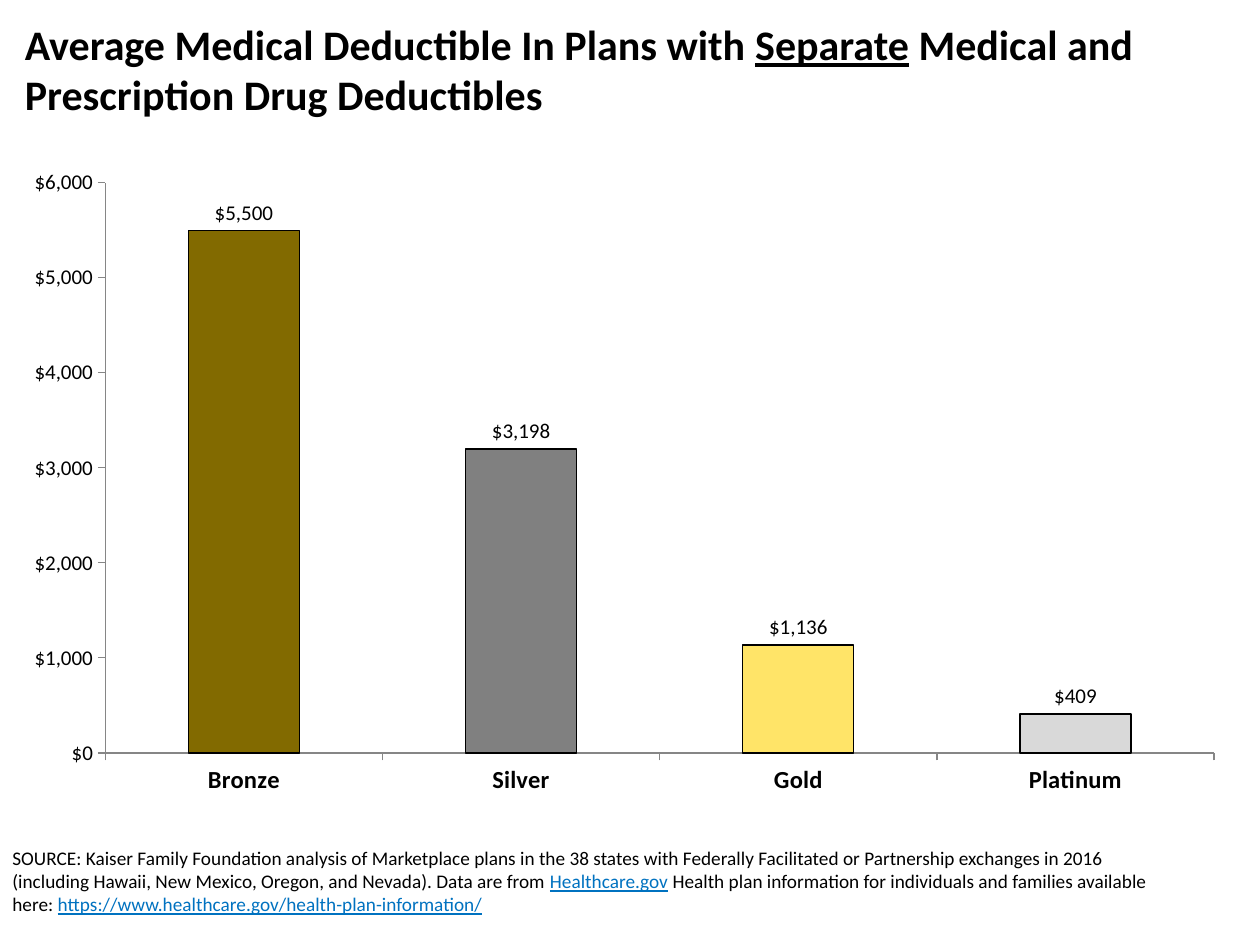
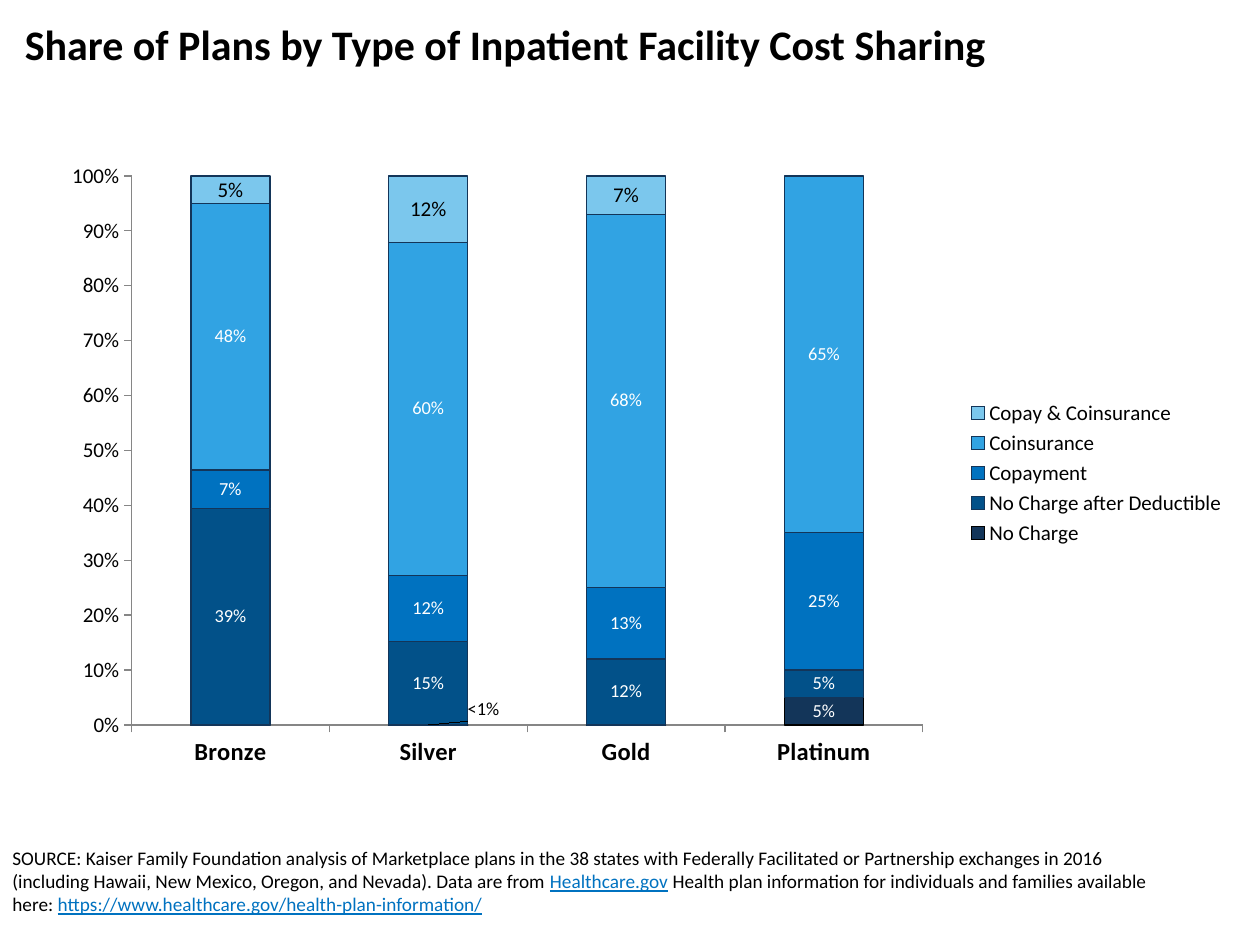
from dataclasses import dataclass

from lxml.etree import SubElement
from pptx import Presentation
from pptx.chart.chart import Chart
from pptx.chart.data import CategoryChartData
from pptx.chart.series import BarSeries
from pptx.dml.color import RGBColor
from pptx.enum.chart import XL_CHART_TYPE as ChartType
from pptx.enum.chart import XL_LABEL_POSITION as LabelPosition
from pptx.enum.chart import XL_LEGEND_POSITION as LegendPosition
from pptx.enum.chart import XL_TICK_MARK as TickMark
from pptx.oxml import parse_xml
from pptx.oxml.ns import nsdecls, qn
from pptx.slide import Slide
from pptx.util import Cm, Pt

FONT = "Calibri"
BLACK = "000000"
WHITE = "FFFFFF"
NAVY = "133559"
LINK_BLUE = "0072C0"
AXIS_GRAY = "868686"
DOLLARS = '"$"#,##0'
PERCENT = "0%"
NONZERO_PERCENT = "0%;;"

METALS = ["Bronze", "Silver", "Gold", "Platinum"]
METAL_COLORS = ["826A00", "808080", "FFE468", "D9D9D9"]


@dataclass
class Run:
    text: str
    color: str = BLACK
    underline: bool = False


@dataclass
class Box:
    """Left, top, width and height in centimetres."""
    left: float
    top: float
    width: float
    height: float

    def lengths(self) -> list[Cm]:
        return [Cm(value) for value in (self.left, self.top, self.width, self.height)]


@dataclass
class Bars:
    name: str
    values: list[float]
    color: str
    line_color: str = NAVY
    label_color: str = WHITE
    label_size: float = 10.5


TITLE_BOX = Box(0.25, 0.25, 24.9, 2.54)
SOURCE_BOX = Box(0, 16.94, 23.5, 2.13)
DEDUCTIBLE_BOX = Box(0.2, 3.17, 24.77, 13.13)
SHARING_BOX = Box(0.2, 2.97, 24.77, 13.13)

SOURCE_RUNS = [
    Run("SOURCE: Kaiser Family Foundation analysis of Marketplace plans in the 38 states with "
        "Federally Facilitated or Partnership exchanges in 2016 (including Hawaii, New Mexico, "
        "Oregon, and Nevada). Data are from "),
    Run("Healthcare.gov", LINK_BLUE, True),
    Run(" Health plan information for individuals and families available here: "),
    Run("https://www.healthcare.gov/health-plan-information/", LINK_BLUE, True),
]

DEDUCTIBLES = Bars("Series 1", [5500, 3198, 1136, 409], NAVY, BLACK, BLACK, 12)

COST_SHARING = [
    Bars("No Charge", [0, 0, 0, 0.05], NAVY, BLACK),
    Bars("No Charge after Deductible", [0.39, 0.15, 0.12, 0.05], "025189"),
    Bars("Copayment", [0.07, 0.12, 0.13, 0.25], LINK_BLUE),
    Bars("Coinsurance", [0.48, 0.6, 0.68, 0.65], "31A3E3"),
    Bars("Copay & Coinsurance", [0.05, 0.12, 0.07, 0], "7BC7ED",
         label_color=BLACK, label_size=12),
]


def rgb(color: str) -> RGBColor:
    return RGBColor.from_string(color)


def set_font(font, size: float, color: str = BLACK, bold: bool = False) -> None:
    font.name = FONT
    font.size = Pt(size)
    font.bold = bold
    font.color.rgb = rgb(color)


def add_text(slide: Slide, box: Box, runs: list[Run], *, size: float, bold: bool = False) -> None:
    frame = slide.shapes.add_textbox(*box.lengths()).text_frame
    frame.word_wrap = True
    paragraph = frame.paragraphs[0]
    for part in runs:
        run = paragraph.add_run()
        run.text = part.text
        set_font(run.font, size, part.color, bold)
        run.font.underline = part.underline


def add_framed_slide(presentation, title: list[Run]) -> Slide:
    """Add a slide with the shared title and source note."""
    slide = presentation.slides.add_slide(presentation.slide_layouts[6])
    add_text(slide, SOURCE_BOX, SOURCE_RUNS, size=11)
    add_text(slide, TITLE_BOX, title, size=24, bold=True)
    return slide


def style_series(series: BarSeries, bars: Bars, label_format: str) -> None:
    series.invert_if_negative = False
    series.format.fill.solid()
    series.format.fill.fore_color.rgb = rgb(bars.color)
    series.format.line.color.rgb = rgb(bars.line_color)
    series.format.line.width = Pt(0.75)
    labels = series.data_labels
    labels.show_value = True
    labels.number_format = label_format
    labels.number_format_is_linked = False
    set_font(labels.font, bars.label_size, bars.label_color)


def add_column_chart(slide: Slide, box: Box, chart_type: ChartType, all_bars: list[Bars], *,
                     axis_format: str, label_format: str, maximum: float, step: float) -> Chart:
    data = CategoryChartData()
    data.categories = METALS
    for bars in all_bars:
        data.add_series(bars.name, bars.values)
    chart = slide.shapes.add_chart(chart_type, *box.lengths(), data).chart
    chart.has_title = False
    chart.has_legend = False
    set_font(chart.font, 12)

    plot = chart.plots[0]
    plot.gap_width = 150
    plot.vary_by_categories = False
    for series, bars in zip(plot.series, all_bars):
        style_series(series, bars, label_format)

    for axis in (chart.category_axis, chart.value_axis):
        axis.has_major_gridlines = False
        axis.major_tick_mark = TickMark.OUTSIDE
        axis.minor_tick_mark = TickMark.NONE
        axis.format.line.color.rgb = rgb(AXIS_GRAY)
        axis.format.line.width = Pt(0.75)
    set_font(chart.category_axis.tick_labels.font, 14, bold=True)
    value_axis = chart.value_axis
    value_axis.minimum_scale = 0
    value_axis.maximum_scale = maximum
    value_axis.major_unit = step
    value_axis.tick_labels.number_format = axis_format
    value_axis.tick_labels.number_format_is_linked = False
    set_font(value_axis.tick_labels.font, 12)
    return chart


def manual_layout(**settings: object):
    layout = parse_xml(f"<c:layout {nsdecls('c')}><c:manualLayout/></c:layout>")
    for name, value in settings.items():
        SubElement(layout[0], qn(f"c:{name}")).set("val", str(value))
    return layout


def place_plot(chart: Chart, left: float, top: float, width: float, height: float) -> None:
    """Fix the inner plot area, in fractions of the chart."""
    plot_area = chart.element.find(f".//{qn('c:plotArea')}")
    for automatic in plot_area.findall(qn("c:layout")):
        plot_area.remove(automatic)
    plot_area.insert(0, manual_layout(layoutTarget="inner", xMode="edge", yMode="edge",
                                      x=left, y=top, w=width, h=height))


def add_side_label(chart: Chart, series: BarSeries, point: int, text: str) -> None:
    """Write a label of its own to the right of a bar too small to hold one."""
    paragraph = series.points[point].data_label.text_frame.paragraphs[0]
    run = paragraph.add_run()
    run.text = text
    set_font(run.font, 10.5)
    label = chart.element.find(f".//{qn('c:dLbl')}")
    label.insert(1, manual_layout(x=0.045, y=-0.023))


def build_deductible_slide(presentation) -> None:
    slide = add_framed_slide(presentation, [
        Run("Average Medical Deductible In Plans with "),
        Run("Separate", underline=True),
        Run(" Medical and Prescription Drug Deductibles"),
    ])
    chart = add_column_chart(slide, DEDUCTIBLE_BOX, ChartType.COLUMN_CLUSTERED, [DEDUCTIBLES],
                             axis_format=DOLLARS, label_format=DOLLARS, maximum=6000, step=1000)
    series = chart.plots[0].series[0]
    series.data_labels.position = LabelPosition.OUTSIDE_END
    for index, color in enumerate(METAL_COLORS):
        point_format = series.points[index].format
        point_format.fill.solid()
        point_format.fill.fore_color.rgb = rgb(color)
        point_format.line.color.rgb = rgb(BLACK)
        point_format.line.width = Pt(0.75)


def build_cost_sharing_slide(presentation) -> None:
    slide = add_framed_slide(
        presentation, [Run("Share of Plans by Type of Inpatient Facility Cost Sharing")])
    chart = add_column_chart(slide, SHARING_BOX, ChartType.COLUMN_STACKED_100, COST_SHARING,
                             axis_format=PERCENT, label_format=NONZERO_PERCENT,
                             maximum=1, step=0.1)
    chart.plots[0].overlap = 100
    place_plot(chart, 0.099, 0.044, 0.644, 0.843)
    chart.has_legend = True
    chart.legend.position = LegendPosition.RIGHT
    chart.legend.include_in_layout = False
    set_font(chart.legend.font, 12)
    add_side_label(chart, chart.plots[0].series[0], METALS.index("Silver"), "<1%")


def main() -> None:
    presentation = Presentation()
    presentation.slide_width = Cm(25.4)
    presentation.slide_height = Cm(19.05)
    build_deductible_slide(presentation)
    build_cost_sharing_slide(presentation)
    presentation.save("out.pptx")


if __name__ == "__main__":
    main()
